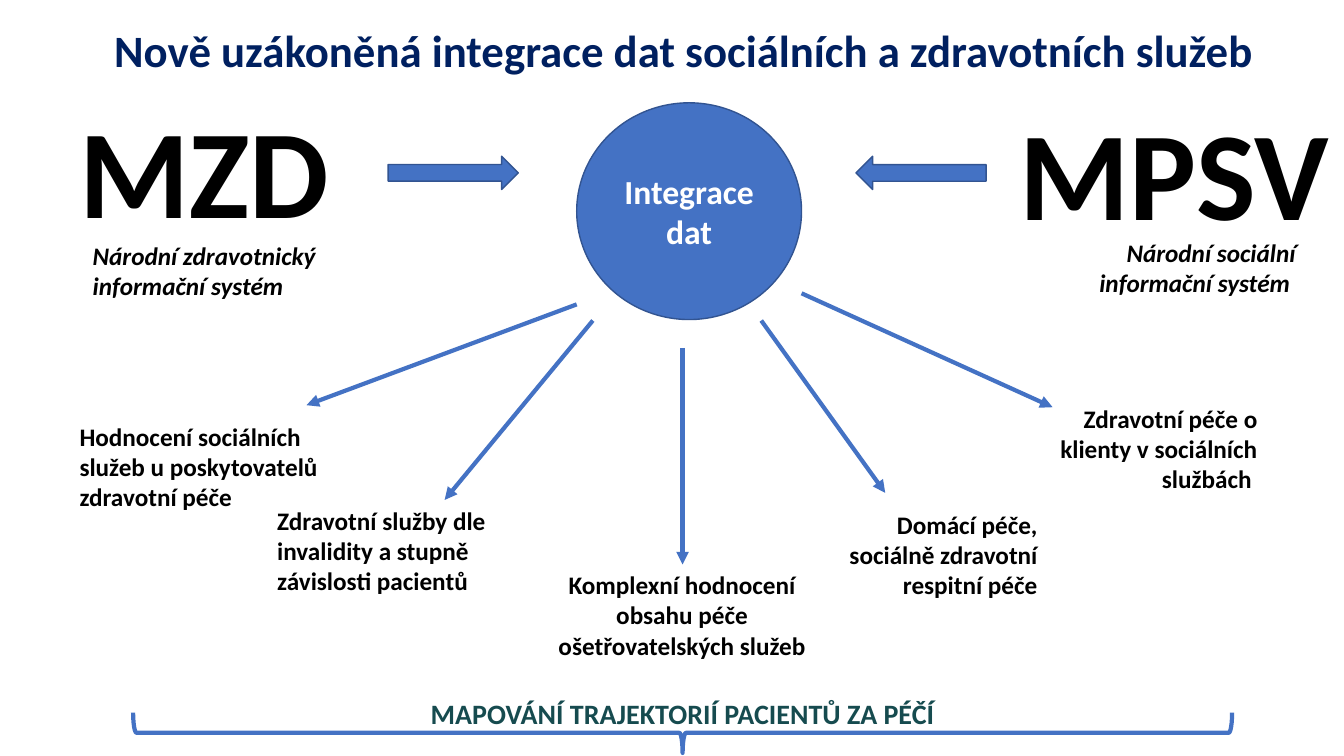
"""Build the slide on joining the data of social and health services."""
from typing import NamedTuple

from lxml.etree import SubElement
from pptx import Presentation
from pptx.dml.color import RGBColor
from pptx.enum.shapes import MSO_CONNECTOR as Link, MSO_SHAPE as Shape
from pptx.enum.text import MSO_ANCHOR as Anchor, MSO_AUTO_SIZE as Fit, PP_ALIGN as Align
from pptx.oxml.ns import qn
from pptx.util import Inches, Pt

BLUE, EDGE, BLACK, WHITE = "4472C4", "325491", "000000", "FFFFFF"


class Box(NamedTuple):
    left: float
    top: float
    width: float
    height: float


class Label(NamedTuple):
    text: str
    box: Box
    size: int = 18
    align: Align = Align.LEFT
    color: str = BLACK
    italic: bool = False
    wrap: bool = True


class Ray(NamedTuple):
    x1: float
    y1: float
    x2: float
    y2: float


class Form(NamedTuple):
    kind: Shape
    box: Box
    turn: int = 0
    fill: str = BLUE
    edge: str = EDGE
    weight: int = 1


TITLE = Label("Nově uzákoněná integrace dat sociálních a zdravotních služeb",
              Box(0.35, 0.18, 12.87, 0.64), 32, Align.CENTER, "002060")
HUB = Label("Integrace dat", Box(5.72, 1.02, 2.23, 2.15), 24, Align.CENTER, WHITE)

LABELS = [
    Label("MZD", Box(0.69, 0.87, 3.67, 1.62), 90),
    Label("MPSV", Box(10.01, 0.89, 3.43, 1.62), 90),
    Label("Národní zdravotnický informační systém",
          Box(0.82, 2.33, 2.62, 0.71), italic=True),
    Label("Národní sociální informační systém ",
          Box(10.33, 2.3, 2.62, 0.71), align=Align.RIGHT, italic=True),
    Label("Hodnocení sociálních služeb u poskytovatelů zdravotní péče",
          Box(0.69, 4.13, 2.62, 1.01)),
    Label("Zdravotní služby dle invalidity a stupně závislosti pacientů",
          Box(2.65, 4.96, 2.62, 1.01)),
    Label("Komplexní hodnocení obsahu péče ošetřovatelských služeb",
          Box(5.35, 5.6, 2.83, 1.01), align=Align.CENTER),
    Label("Domácí péče, sociálně zdravotní respitní péče",
          Box(7.95, 5, 2.44, 1.01), align=Align.RIGHT),
    Label("Zdravotní péče o klienty v sociálních službách ",
          Box(9.95, 3.95, 2.62, 1.01), align=Align.RIGHT),
    Label("MAPOVÁNÍ TRAJEKTORIÍ PACIENTŮ ZA PÉČÍ",
          Box(4.15, 6.86, 5.24, 0.44), 20, Align.CENTER, "164B4F", wrap=False),
]

FORMS = [
    Form(Shape.RIGHT_ARROW, Box(3.85, 1.55, 1.29, 0.33)),
    Form(Shape.RIGHT_ARROW, Box(8.49, 1.55, 1.29, 0.33), 180),
    Form(Shape.RIGHT_BRACE, Box(6.57, 1.82, 0.4, 10.9), 90, "", BLUE, 3),
]

RAYS = [
    Ray(5.72, 3.02, 3.04, 4.02),
    Ray(5.88, 3.18, 4.41, 4.96),
    Ray(6.77, 3.45, 6.77, 5.6),
    Ray(7.55, 3.18, 8.78, 4.89),
    Ray(7.95, 2.91, 10.44, 4.04),
]


def paint(target, color: str) -> None:
    target.rgb = RGBColor.from_string(color)


def write(shape, label: Label, anchor: Anchor = Anchor.TOP) -> None:
    frame = shape.text_frame
    frame.word_wrap = label.wrap
    frame.auto_size = Fit.NONE
    frame.vertical_anchor = anchor
    para = frame.paragraphs[0]
    para.text = label.text
    para.alignment = label.align
    font = para.font
    font.name, font.size = "Calibri", Pt(label.size)
    font.bold, font.italic = True, label.italic
    paint(font.color, label.color)


def draw_form(slide, form: Form):
    shape = slide.shapes.add_shape(form.kind, *map(Inches, form.box))
    shape.shadow.inherit = False
    shape.rotation = form.turn
    if form.fill:
        shape.fill.solid()
        paint(shape.fill.fore_color, form.fill)
    else:
        shape.fill.background()
    paint(shape.line.color, form.edge)
    shape.line.width = Pt(form.weight)
    return shape


def draw_ray(slide, ray: Ray) -> None:
    line = slide.shapes.add_connector(Link.STRAIGHT, *map(Inches, ray))
    paint(line.line.color, BLUE)
    line.line.width = Pt(3)
    props = line._element.spPr
    SubElement(props.find(qn("a:ln")), qn("a:tailEnd"), type="triangle")
    SubElement(props, qn("a:effectLst"))


def main() -> None:
    deck = Presentation()
    deck.slide_width, deck.slide_height = Inches(13.33), Inches(7.5)
    slide = deck.slides.add_slide(deck.slide_layouts[5])
    title = slide.shapes.title
    title.left, title.top, title.width, title.height = map(Inches, TITLE.box)
    write(title, TITLE)
    for form in FORMS:
        draw_form(slide, form)
    write(draw_form(slide, Form(Shape.OVAL, HUB.box)), HUB, Anchor.MIDDLE)
    for ray in RAYS:
        draw_ray(slide, ray)
    for label in LABELS:
        write(slide.shapes.add_textbox(*map(Inches, label.box)), label)
    deck.save("out.pptx")


if __name__ == "__main__":
    main()
